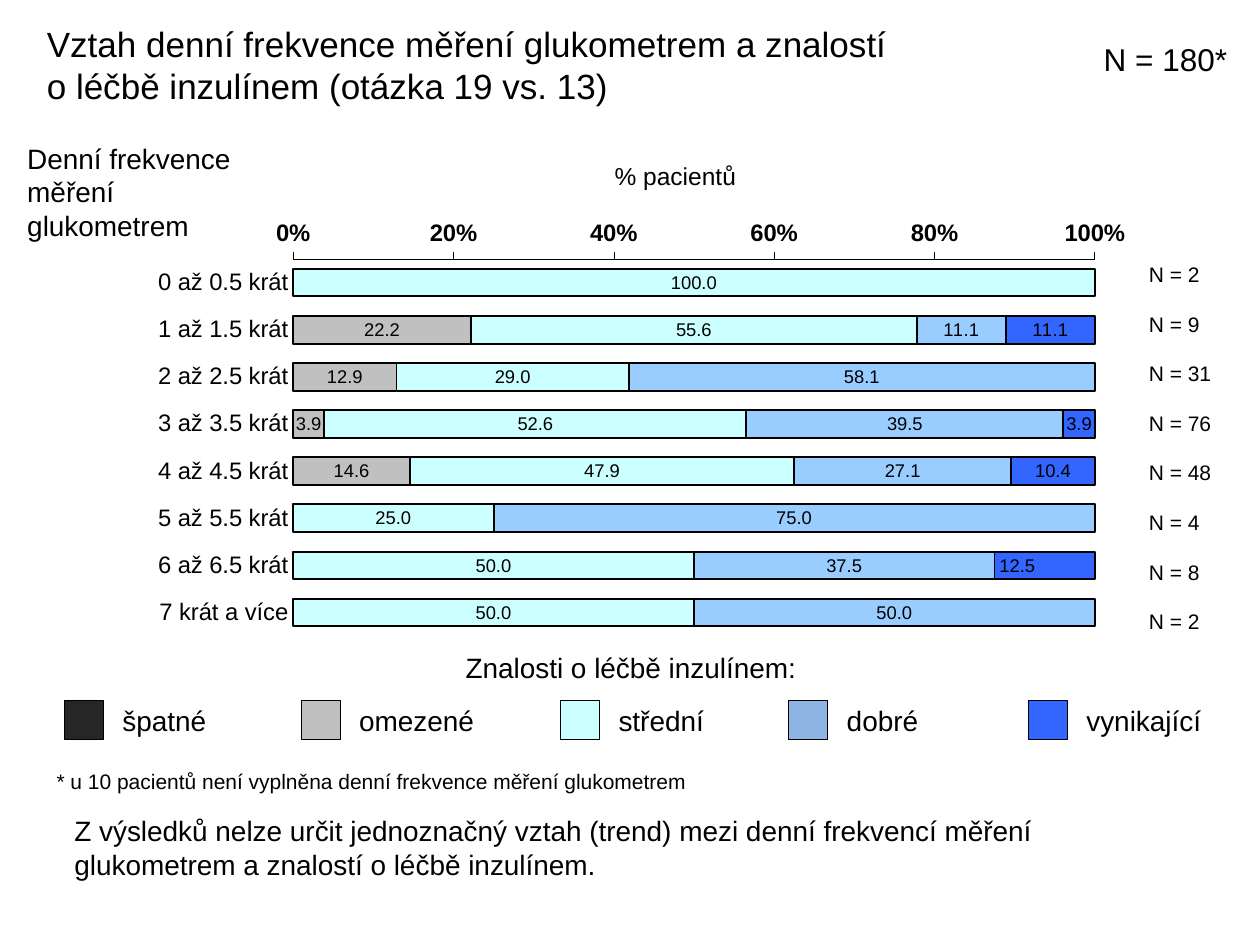
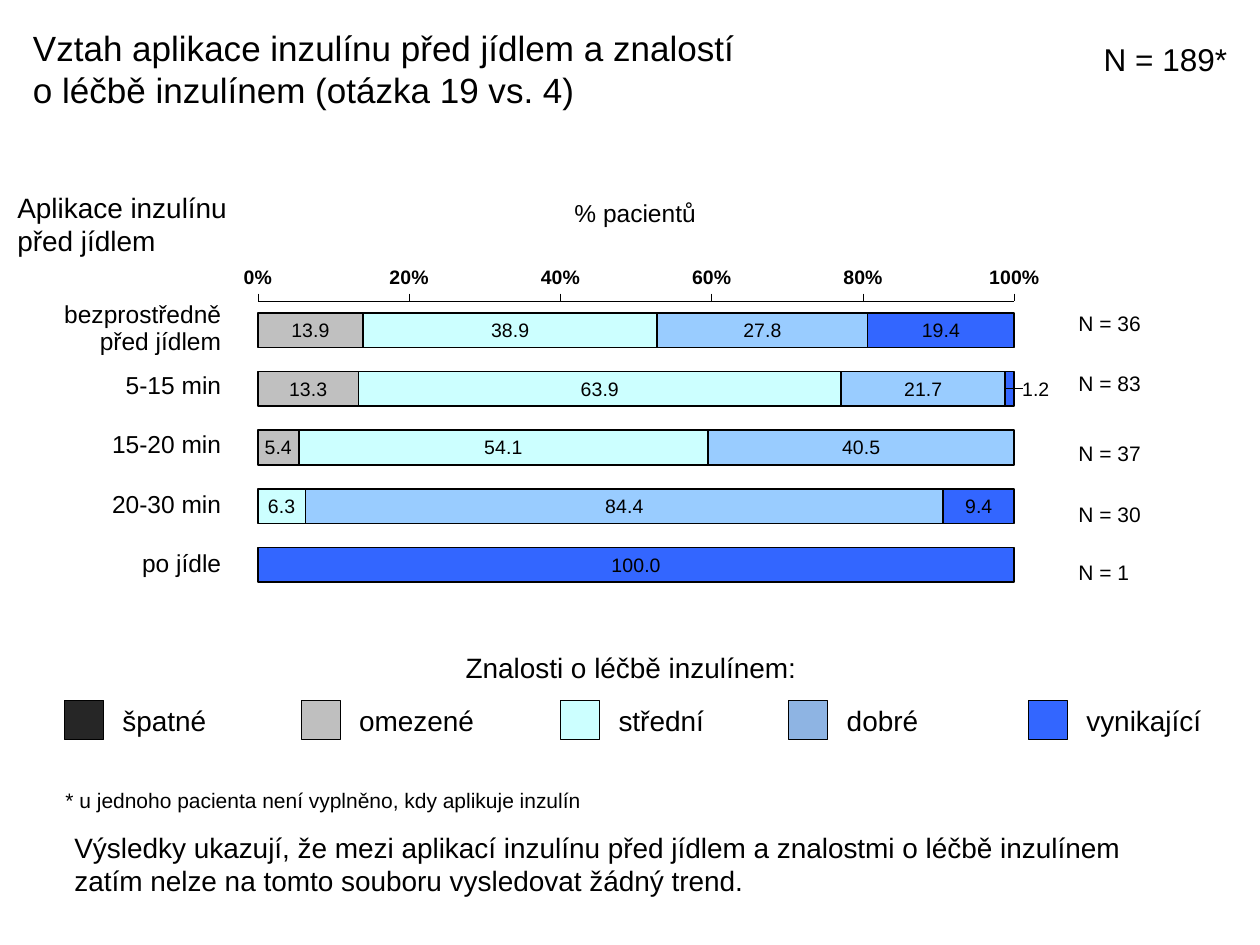
from lxml import etree
from pptx import Presentation
from pptx import util as u
from pptx.chart import data as cd
from pptx.dml import color as co
from pptx.enum import chart as ch, shapes as sh, text as tx
from pptx.oxml import ns

FONT = "Arial"
HUES = {
    "ink": "000000", "edge": "FFFFFF",
    "špatné": "262626", "omezené": "BFBFBF", "střední": "CCFFFF",
    "dobré": "8EB4E3", "vynikající": "3366FF",
}
BARS = {"omezené": "C0C0C0", "střední": "CCFFFF", "dobré": "99CCFF", "vynikající": "3366FF"}
KEYS = {"špatné": 0, "omezené": 4.77, "střední": 10, "dobré": 14.6, "vynikající": 19.43}
LEFT, MID, RIGHT = tx.PP_ALIGN.LEFT, tx.PP_ALIGN.CENTER, tx.PP_ALIGN.RIGHT
TOP, CORE, BASE = tx.MSO_ANCHOR.TOP, tx.MSO_ANCHOR.MIDDLE, tx.MSO_ANCHOR.BOTTOM


def put(item, **vals):
    """Set every given attribute on the item."""
    for name, val in vals.items():
        setattr(item, name, val)


def rgb(hue):
    """Turn a hex string into a colour."""
    return co.RGBColor.from_string(hue)


def cms(*nums):
    """Turn numbers into centimetre lengths."""
    return [u.Cm(num) for num in nums]


def ink(font, size, bold=False):
    """Give a font the shared face and colour."""
    put(font, name=FONT, size=u.Pt(size), bold=bold)
    font.color.rgb = rgb(HUES["ink"])


def write(frame, words, size, align=LEFT, pad=None, **look):
    """Fill a text frame, one paragraph a line."""
    put(frame, **{"word_wrap": True, "vertical_anchor": TOP,
                  "auto_size": tx.MSO_AUTO_SIZE.NONE, **look})
    if pad is not None:
        sides = ("left", "top", "right", "bottom")
        put(frame, **{f"margin_{side}": u.Cm(pad) for side in sides})
    frame.text = words
    for para in frame.paragraphs:
        para.alignment = align
        for run in para.runs:
            ink(run.font, size)


def note(slide, box, words, size, **look):
    """Add a text box."""
    write(slide.shapes.add_textbox(*cms(*box)).text_frame, words, size, **look)


def head(slide, box, words, count):
    """Place the title and the total count."""
    title = slide.shapes.title
    put(title, **dict(zip(("left", "top", "width", "height"), cms(*box))))
    write(title.text_frame, words, 20)
    note(slide, (22, 0.69, 3.3, 1.02), count, 18)


def legend(slide, box):
    """Draw the legend heading and its swatches."""
    left, top = box
    note(slide, (left + 7.79, top, 7.26, 0.94), "Znalosti o léčbě inzulínem:", 16,
         align=MID, word_wrap=False)
    for name, step in KEYS.items():
        x = left + step
        mark = slide.shapes.add_shape(sh.MSO_SHAPE.RECTANGLE, *cms(x, top + 1.14, 0.79, 0.79))
        mark.shadow.inherit = False
        mark.fill.solid()
        mark.fill.fore_color.rgb = rgb(HUES[name])
        mark.line.color.rgb = rgb(HUES["ink"])
        mark.line.width = u.Pt(0.5)
        note(slide, (x + 0.97, top + 1.17, 2.8, 0.76), name, 16, pad=0.2, vertical_anchor=CORE)


def place(chart, area):
    """Fix the inner plot area as shares of the chart."""
    plot = chart.element.xpath("//c:plotArea")[0]
    for old in plot.findall(ns.qn("c:layout")):
        plot.remove(old)
    lay = etree.Element(ns.qn("c:layout"))
    spot = etree.SubElement(lay, ns.qn("c:manualLayout"))
    vals = {"layoutTarget": "inner", "xMode": "edge", "yMode": "edge", **dict(zip("xywh", area))}
    for tag, val in vals.items():
        etree.SubElement(spot, ns.qn(f"c:{tag}")).set("val", str(val))
    plot.insert(0, lay)


def nudge(chart, shift):
    """Move the single-point label sideways by a share of the chart."""
    label = chart.element.xpath("//c:dLbl")[0]
    lay = etree.Element(ns.qn("c:layout"))
    spot = etree.SubElement(lay, ns.qn("c:manualLayout"))
    for tag, val in (("x", shift), ("y", 0)):
        etree.SubElement(spot, ns.qn(f"c:{tag}")).set("val", str(val))
    label.insert(1, lay)


def axes(chart, size, named):
    """Format both axes."""
    cat, val = chart.category_axis, chart.value_axis
    none, out = ch.XL_TICK_MARK.NONE, ch.XL_TICK_MARK.OUTSIDE
    put(cat, reverse_order=True, visible=named, has_major_gridlines=False,
        major_tick_mark=none, minor_tick_mark=none)
    put(val, minimum_scale=0, maximum_scale=1, major_unit=0.2, has_major_gridlines=False,
        major_tick_mark=out, minor_tick_mark=none)
    put(val.tick_labels, number_format="0%", number_format_is_linked=False)
    ink(val.tick_labels.font, size, True)
    if named:
        ink(cat.tick_labels.font, size)
        cat.format.line.fill.background()
    val.format.line.color.rgb = rgb(HUES["ink"])
    val.format.line.width = u.Pt(0.25)


def bars(slide, box, names, rows, area, sizes, edge, odd, shift=0, named=True):
    """Draw the stacked bars, with one label set apart."""
    data = cd.CategoryChartData()
    data.categories = names
    for name, vals in zip(BARS, zip(*rows)):
        data.add_series(name, vals)
    chart = slide.shapes.add_chart(ch.XL_CHART_TYPE.BAR_STACKED_100, *cms(*box), data).chart
    put(chart, has_legend=False, has_title=False)
    ink(chart.font, sizes[0])
    plot = chart.plots[0]
    put(plot, gap_width=70, overlap=100, vary_by_categories=False)
    for part, hue in zip(plot.series, BARS.values()):
        part.format.fill.solid()
        part.format.fill.fore_color.rgb = rgb(hue)
        part.format.line.color.rgb = rgb(HUES["ink"])
        part.format.line.width = u.Pt(edge)
        put(part.data_labels, show_value=True, number_format="0.0",
            number_format_is_linked=False, position=ch.XL_LABEL_POSITION.CENTER)
        ink(part.data_labels.font, sizes[1])
    tag = plot.series[3].points[odd].data_label
    tag.position = ch.XL_LABEL_POSITION.INSIDE_BASE
    ink(tag.font, sizes[1])
    if shift:
        nudge(chart, shift)
    axes(chart, sizes[0], named)
    place(chart, area)


def counts(slide, left, tops, nums):
    """List the group sizes beside the bars."""
    for top, num in zip(tops, nums):
        note(slide, (left, top, 1.78, 0.79), f"N = {num}", 12,
             word_wrap=False, vertical_anchor=CORE)


def rim(cell):
    """Give a cell thin white borders."""
    props = cell._tc.get_or_add_tcPr()
    for pos, tag in enumerate(("lnL", "lnR", "lnT", "lnB")):
        line = etree.Element(ns.qn(f"a:{tag}"), w="12700")
        fill = etree.SubElement(line, ns.qn("a:solidFill"))
        etree.SubElement(fill, ns.qn("a:srgbClr"), val=HUES["edge"])
        props.insert(pos, line)


def labels(slide, box, names):
    """Set the row names in a one-column table."""
    table = slide.shapes.add_table(len(names), 1, *cms(*box)).table
    put(table, first_row=False, horz_banding=False)
    for row, name in enumerate(names):
        table.rows[row].height = u.Cm(1.19 if row else 1.8)
        cell = table.cell(row, 0)
        put(cell, margin_left=u.Cm(0.03), margin_right=u.Cm(0.03), margin_top=u.Cm(0.03),
            margin_bottom=0, vertical_anchor=CORE if row else BASE)
        cell.text = name
        para = cell.text_frame.paragraphs[0]
        para.alignment = RIGHT
        ink(para.runs[0].font, 14)
        cell.fill.background()
        rim(cell)


def meters(slide):
    """Build the slide on glucometer frequency."""
    head(slide, (0.69, 0.33, 17.6, 1.4),
         "Vztah denní frekvence měření glukometrem a znalostí o léčbě inzulínem (otázka 19 vs. 13)",
         "N = 180*")
    names = [f"{num} až {num}.5 krát" for num in range(7)] + ["7 krát a více"]
    rows = [
        (None, 100, None, None), (22.2, 55.6, 11.1, 11.1), (12.9, 29, 58.1, None),
        (3.9, 52.6, 39.5, 3.9), (14.6, 47.9, 27.1, 10.4), (None, 25, 75, None),
        (None, 50, 37.5, 12.5), (None, 50, 50, None),
    ]
    bars(slide, (0.69, 3.66, 22.89, 9.47), names, rows, (0.228, 0.165, 0.706, 0.803),
         (13.6, 10.5), 1.13, 6)
    note(slide, (11.71, 3.12, 3.81, 0.86), "% pacientů", 14, align=MID)
    note(slide, (0.3, 2.72, 4.8, 2.31), "Denní frekvence\nměření glukometrem", 16)
    counts(slide, 22.91, [5.13 + row for row in range(8)], (2, 9, 31, 76, 48, 4, 8, 2))
    legend(slide, (1.3, 12.98))
    note(slide, (0.89, 15.37, 13.79, 0.76),
         "* u 10 pacientů není vyplněna denní frekvence měření glukometrem", 12)
    note(slide, (1.3, 16.21, 23.01, 1.93),
         "Z výsledků nelze určit jednoznačný vztah (trend) mezi denní frekvencí měření "
         "glukometrem a znalostí o léčbě inzulínem.", 16, pad=0.2)


def meals(slide):
    """Build the slide on insulin before meals."""
    head(slide, (0.41, 0.41, 14.91, 1.4),
         "Vztah aplikace inzulínu před jídlem a znalostí o léčbě inzulínem (otázka 19 vs. 4)",
         "N = 189*")
    names = ["bezprostředně před jídlem", "5-15 min", "15-20 min", "20-30 min", "po jídle"]
    rows = [
        (13.9, 38.9, 27.8, 19.4), (13.3, 63.9, 21.7, 1.2), (5.4, 54.1, 40.5, None),
        (None, 6.3, 84.4, 9.4), (None, None, None, 100),
    ]
    bars(slide, (-2.16, 4.7, 24.13, 7.52), names, rows, (0.305, 0.182, 0.632, 0.786),
         (11.1, 11.1), 0.93, 1, shift=0.01, named=False)
    labels(slide, (1.09, 5.38, 3.4, 6.56), names)
    note(slide, (10.9, 3.86, 3.81, 0.86), "% pacientů", 14, align=MID)
    note(slide, (0.1, 3.71, 5.99, 1.63), "Aplikace inzulínu před jídlem", 16)
    counts(slide, 21.49, (6.12, 7.32, 8.74, 9.96, 11.13), (36, 83, 37, 30, 1))
    legend(slide, (1.3, 12.98))
    note(slide, (1.07, 15.75, 13.79, 0.76),
         "* u jednoho pacienta není vyplněno, kdy aplikuje inzulín", 12)
    note(slide, (1.3, 16.54, 23.01, 1.73),
         "Výsledky ukazují, že mezi aplikací inzulínu před jídlem a znalostmi o léčbě inzulínem "
         "zatím nelze na tomto souboru vysledovat žádný trend.", 16, pad=0.2)


def main():
    """Build and save the deck."""
    deck = Presentation()
    put(deck, slide_width=u.Cm(25.4), slide_height=u.Cm(19.05))
    for build in (meters, meals):
        build(deck.slides.add_slide(deck.slide_layouts[5]))
    deck.save("out.pptx")


if __name__ == "__main__":
    main()
